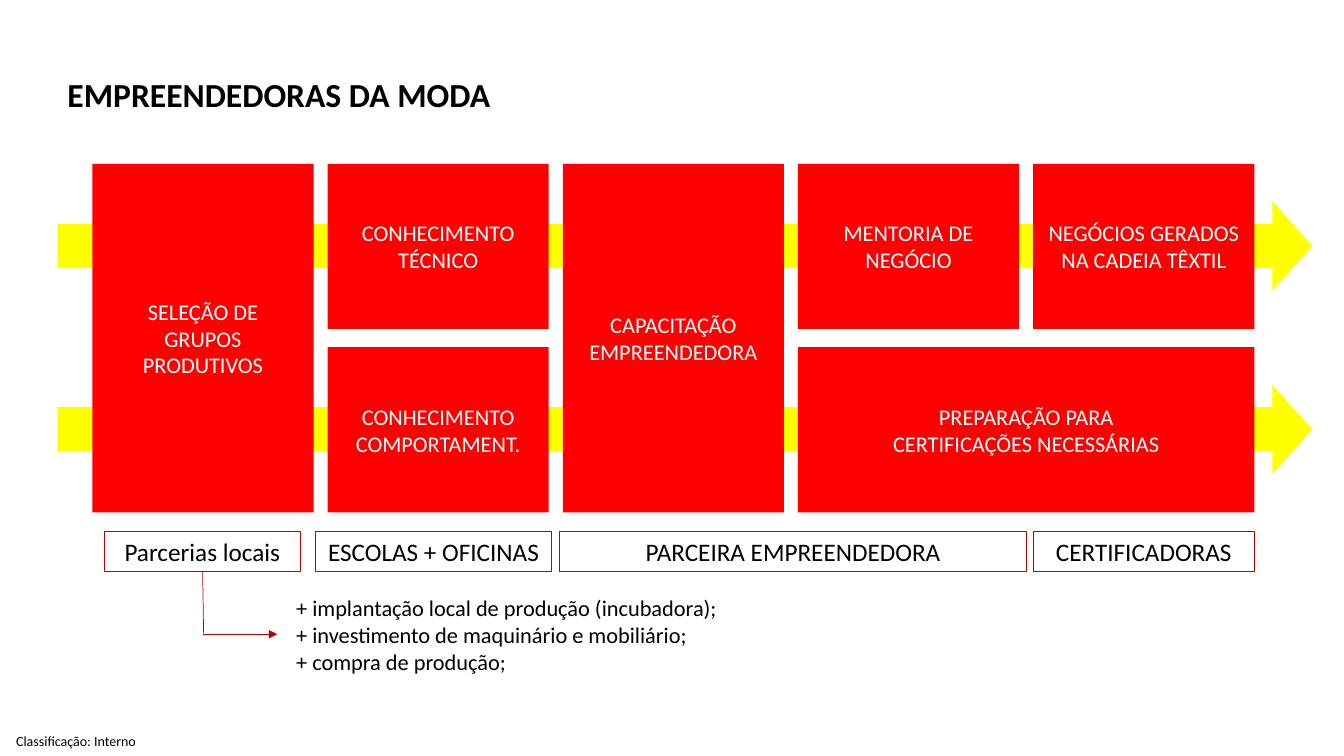
from pptx import Presentation
from pptx.dml.color import RGBColor
from pptx.enum import shapes, text
from pptx.oxml.ns import qn
from pptx.util import Pt
from lxml import etree

TITLE = "EMPREENDEDORAS DA MODA"
# (text lines, first column, columns spanned, first row, rows spanned)
STEPS = [
    (["SELEÇÃO DE", "GRUPOS PRODUTIVOS"], 0, 1, 0, 2),
    (["CONHECIMENTO TÉCNICO"], 1, 1, 0, 1),
    (["CONHECIMENTO COMPORTAMENT."], 1, 1, 1, 1),
    (["CAPACITAÇÃO EMPREENDEDORA"], 2, 1, 0, 2),
    (["MENTORIA DE NEGÓCIO"], 3, 1, 0, 1),
    (["PREPARAÇÃO PARA", "CERTIFICAÇÕES NECESSÁRIAS"], 3, 2, 1, 1),
    (["NEGÓCIOS GERADOS NA CADEIA TÊXTIL"], 4, 1, 0, 1),
]
# (text, left, width)
PARTNERS = [
    ("Parcerias locais", 74.5, 140),
    ("ESCOLAS + OFICINAS", 225.5, 168.5),
    ("PARCEIRA EMPREENDEDORA", 400, 333),
    ("CERTIFICADORAS", 738, 158),
]
SUPPORT = [
    "+ implantação local de produção (incubadora);",
    "+ investimento de maquinário e mobiliário;",
    "+ compra de produção;",
]
CLASSIFICATION = "Classificação: Interno"
COLORS = {"step": "FF0000", "flow": "FFFF00", "line": "C00000",
          "dark": "000000", "light": "FFFFFF"}

COL_LEFT, COL_PITCH, COL_W = 66, 168, 158
ROW_TOP, ROW_PITCH, ROW_H = 117, 131, 118
FLOW_H = 63.5
PARTNER_TOP, PARTNER_H = 379.5, 28.5
ALIGN, ANCHOR = text.PP_ALIGN, text.MSO_ANCHOR
RECT = shapes.MSO_SHAPE.RECTANGLE


def rgb(name):
    return RGBColor.from_string(COLORS[name])


def write(sp, lines, size, color="dark", align=ALIGN.LEFT, bold=False, **frame):
    tf = sp.text_frame
    settings = {"word_wrap": True, "auto_size": text.MSO_AUTO_SIZE.NONE,
                "vertical_anchor": ANCHOR.TOP} | frame
    for key, value in settings.items():
        setattr(tf, key, value)
    tf.text = "\n".join(lines)
    for p in tf.paragraphs:
        p.alignment = align
        for key, value in {"name": "Calibri", "size": Pt(size), "bold": bold}.items():
            setattr(p.font, key, value)
        p.font.color.rgb = rgb(color)


def add_shape(kind, box, fill=None, line=None):
    sp = s.shapes.add_shape(kind, *map(Pt, box))
    sp.shadow.inherit = False
    if fill:
        sp.fill.solid()
        sp.fill.fore_color.rgb = rgb(fill)
    else:
        sp.fill.background()
    if line:
        sp.line.color.rgb = rgb(line)
        sp.line.width = Pt(0.75)
    else:
        sp.line.fill.background()
    return sp


def add_line(*ends, arrow=False):
    line = s.shapes.add_connector(shapes.MSO_CONNECTOR.STRAIGHT, *map(Pt, ends))
    line.line.color.rgb = rgb("line")
    line.line.width = Pt(0.5)
    if arrow:
        etree.SubElement(line.line._get_or_add_ln(), qn("a:tailEnd"), type="triangle")
    etree.SubElement(line._element.spPr, qn("a:effectLst"))


prs = Presentation()
prs.slide_width, prs.slide_height = Pt(960), Pt(540)
s = prs.slides.add_slide(prs.slide_layouts[5])

# Title
title = s.shapes.title
for key, value in {"left": 41, "top": 49, "width": 361, "height": 36}.items():
    setattr(title, key, Pt(value))
write(title, [TITLE], 24, bold=True)

# Flow arrows behind the steps
for row in range(2):
    flow = add_shape(shapes.MSO_SHAPE.RIGHT_ARROW,
                     (41, 144 + row * ROW_PITCH, 896.5, FLOW_H), fill="flow")
    flow.adjustments[1] = 0.45

# Steps on a grid of five columns and two rows
for lines, col, cols, row, rows in STEPS:
    box = (COL_LEFT + col * COL_PITCH, ROW_TOP + row * ROW_PITCH,
           COL_W + (cols - 1) * COL_PITCH, ROW_H + (rows - 1) * ROW_PITCH)
    write(add_shape(RECT, box, fill="step"), lines, 16, "light", ALIGN.CENTER,
          vertical_anchor=ANCHOR.MIDDLE)

# Partners under the steps
for name, left, width in PARTNERS:
    sp = add_shape(RECT, (left, PARTNER_TOP, width, PARTNER_H), line="line")
    write(sp, [name], 18, align=ALIGN.CENTER, word_wrap=False)

# Elbow from local partners to their support
add_line(144.75, 408, 145.5, 454)
add_line(145.5, 453, 198, 453, arrow=True)
support = s.shapes.add_textbox(*map(Pt, (204.5, 421, 318.5, 65.5)))
write(support, SUPPORT, 16)

# Classification
footer = s.shapes.add_textbox(*map(Pt, (0, 519, 109.5, 21)))
write(footer, [CLASSIFICATION], 10, vertical_anchor=ANCHOR.MIDDLE,
      margin_left=Pt(11.5), margin_right=0, margin_top=0, margin_bottom=0)

prs.save("out.pptx")
